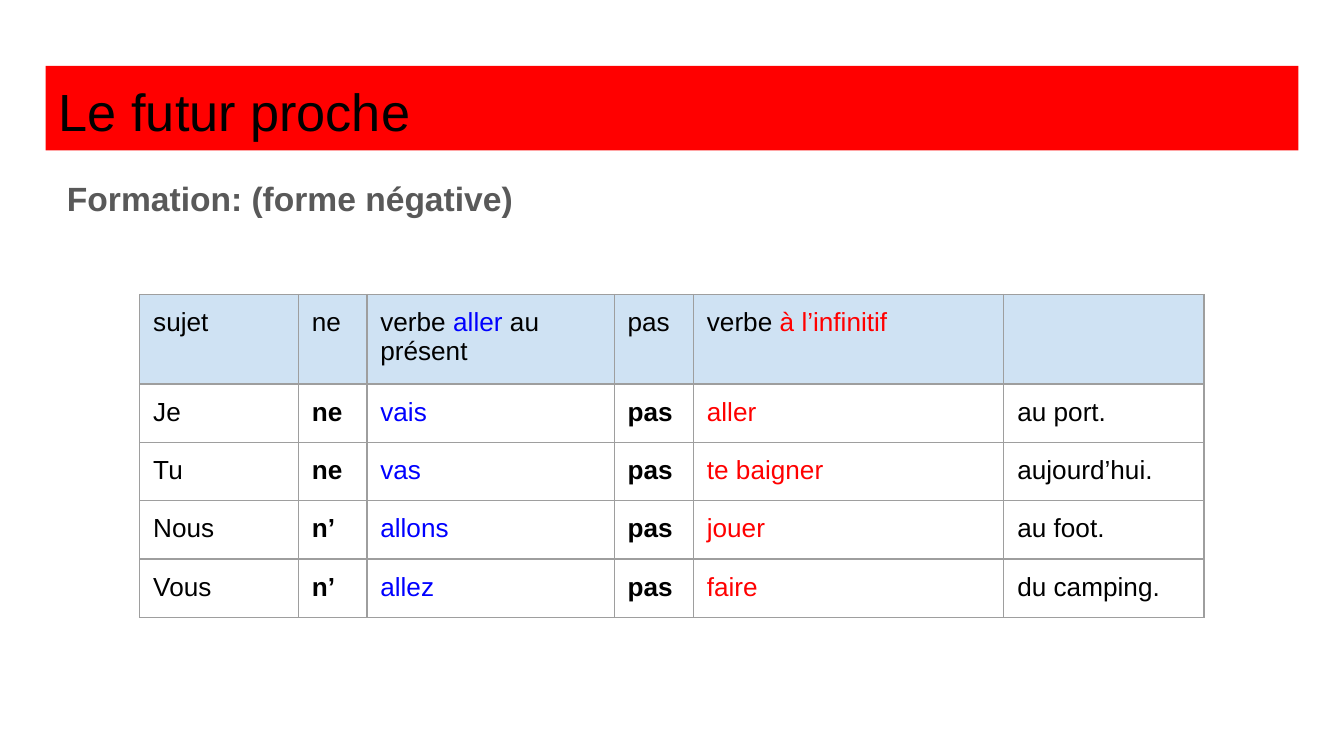
from typing import NamedTuple

from lxml import etree
from pptx import Presentation
from pptx.dml.color import RGBColor
from pptx.enum import shapes, text
from pptx.oxml import ns
from pptx.util import Inches, Pt

BLACK = RGBColor(0x00, 0x00, 0x00)
BLUE = RGBColor(0x00, 0x00, 0xFF)
RED = RGBColor(0xFF, 0x00, 0x00)
GREY = RGBColor(0x59, 0x59, 0x59)
PALE_BLUE = RGBColor(0xCF, 0xE2, 0xF3)
BORDER = RGBColor(0x9E, 0x9E, 0x9E)
FONT = "Arial"
MARGIN = Inches(0.1)


class Column(NamedTuple):
    width: float
    heading: list[tuple[str, RGBColor]]
    color: RGBColor = BLACK
    bold: bool = False


COLUMNS = [
    Column(1.18, [("sujet", BLACK)]),
    Column(0.51, [("ne", BLACK)], bold=True),
    Column(1.84, [("verbe ", BLACK), ("aller", BLUE), (" au présent", BLACK)], BLUE),
    Column(0.59, [("pas", BLACK)], bold=True),
    Column(2.31, [("verbe ", BLACK), ("à l’infinitif", RED)], RED),
    Column(1.49, []),
]
SENTENCES = [
    ("Je", "ne", "vais", "pas", "aller", "au port."),
    ("Tu", "ne", "vas", "pas", "te baigner", "aujourd’hui."),
    ("Nous", "n’", "allons", "pas", "jouer", "au foot."),
    ("Vous", "n’", "allez", "pas", "faire", "du camping."),
]
ROW_HEIGHT = Inches(5 / 12)
FRAME_SIDE = Inches(3.28)


def style(paragraph, size: float, color: RGBColor, bold: bool = False) -> None:
    font = paragraph.font
    font.name, font.size, font.bold = FONT, Pt(size), bold
    font.color.rgb = color


def write_line(shape, words: str, size: float, color: RGBColor,
               bold: bool = False) -> None:
    frame = shape.text_frame
    frame.word_wrap = True
    frame.vertical_anchor = text.MSO_ANCHOR.TOP
    frame.margin_left = frame.margin_right = MARGIN
    frame.margin_top = frame.margin_bottom = MARGIN
    paragraph = frame.paragraphs[0]
    paragraph.text = words
    paragraph.alignment = text.PP_ALIGN.LEFT
    style(paragraph, size, color, bold)


def draw_borders(cell) -> None:
    properties = cell._tc.get_or_add_tcPr()
    for position, side in enumerate(("lnL", "lnR", "lnT", "lnB")):
        line = etree.Element(ns.qn(f"a:{side}"), w=str(Pt(0.75)))
        fill = etree.SubElement(line, ns.qn("a:solidFill"))
        etree.SubElement(fill, ns.qn("a:srgbClr"), val=str(BORDER))
        properties.insert(position, line)


def fill_cell(cell, parts: list[tuple[str, RGBColor]], bold: bool, header: bool) -> None:
    cell.margin_left = cell.margin_right = MARGIN
    cell.margin_top = cell.margin_bottom = MARGIN
    if header:
        cell.fill.solid()
        cell.fill.fore_color.rgb = PALE_BLUE
    else:
        cell.fill.background()
    draw_borders(cell)
    paragraph = cell.text_frame.paragraphs[0]
    style(paragraph, 14, BLACK, bold)
    for words, color in parts:
        run = paragraph.add_run()
        run.text = words
        run.font.color.rgb = color


def main() -> None:
    deck = Presentation()
    deck.slide_width = Inches(10)
    deck.slide_height = Inches(10 * 9 / 16)
    slide = deck.slides.add_slide(deck.slide_layouts[6])

    # Title band
    title = slide.shapes.add_shape(
        shapes.MSO_SHAPE.RECTANGLE, Inches(0.34), Inches(0.49), Inches(9.32), Inches(0.63))
    title.shadow.inherit = False
    title.fill.solid()
    title.fill.fore_color.rgb = RED
    title.line.fill.background()
    write_line(title, "Le futur proche", 28, BLACK)

    # Subtitle
    subtitle = slide.shapes.add_textbox(
        Inches(0.4), Inches(1.18), Inches(9.32), Inches(3.74))
    write_line(subtitle, "Formation: (forme négative)", 18, GREY, bold=True)
    subtitle.text_frame.paragraphs[0].line_spacing = 1.15

    # Conjugation table
    conjugation = slide.shapes.add_table(
        len(SENTENCES) + 1, len(COLUMNS), Inches(1.04), Inches(2.19),
        FRAME_SIDE, FRAME_SIDE)
    table = conjugation.table
    table.first_row = table.horz_banding = False
    for row in table.rows:
        row.height = ROW_HEIGHT
    for c, column in enumerate(COLUMNS):
        table.columns[c].width = Inches(column.width)
        fill_cell(table.cell(0, c), column.heading, bold=False, header=True)
        for r, sentence in enumerate(SENTENCES, start=1):
            fill_cell(table.cell(r, c), [(sentence[c], column.color)],
                      column.bold, header=False)
    # The frame keeps its own size; rows grow to fit their text
    conjugation.width = conjugation.height = FRAME_SIDE

    deck.save("out.pptx")


if __name__ == "__main__":
    main()
